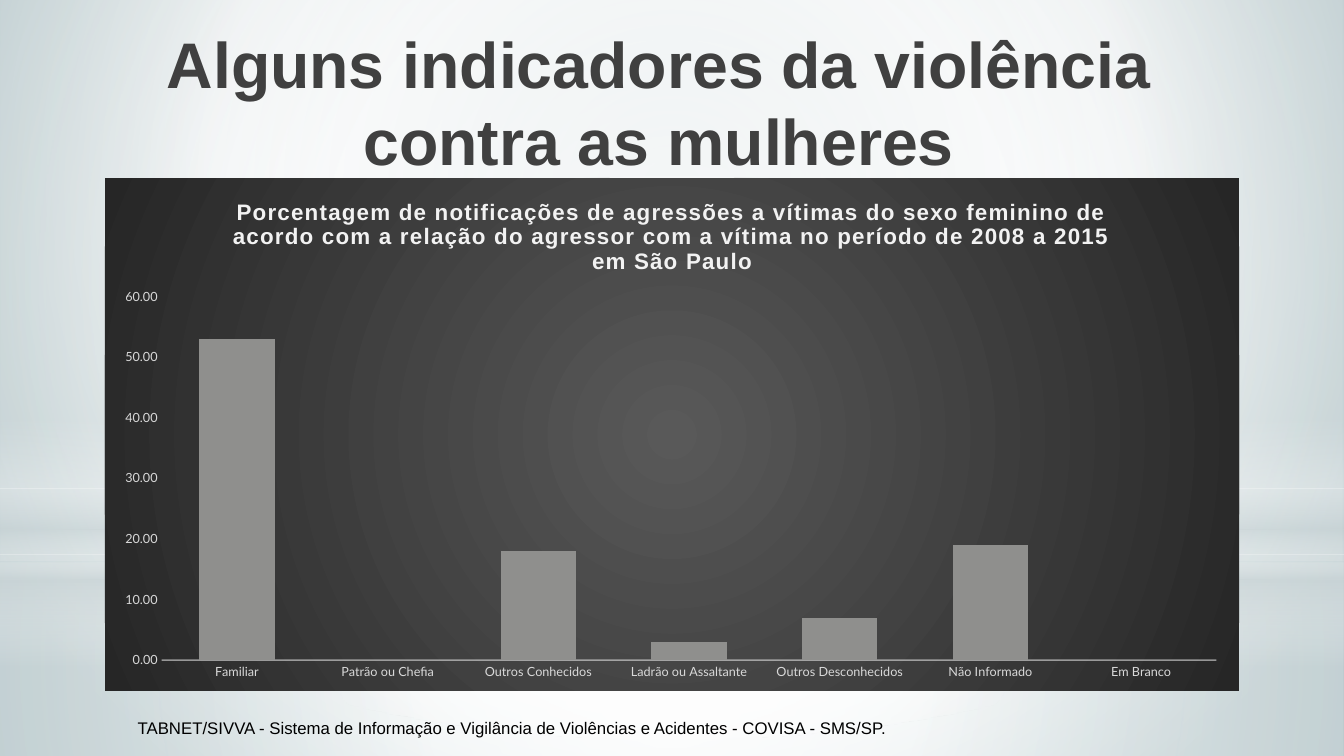
from dataclasses import dataclass
from itertools import pairwise

from lxml import etree
from pptx import Presentation, util as u
from pptx.chart.data import CategoryChartData
from pptx.dml.color import RGBColor
from pptx.enum import chart as charts, shapes, text
from pptx.oxml import parse_xml
from pptx.oxml.ns import nsdecls, qn

WIDTH, HEIGHT = u.Inches(13.33), u.Inches(7.5)

WHITE = RGBColor(0xFF, 0xFF, 0xFF)
BLACK = RGBColor(0x00, 0x00, 0x00)
MIST = RGBColor(0xCD, 0xD7, 0xD9)
PALE_TEAL = RGBColor(0xC2, 0xD0, 0xD3)
TEAL = RGBColor(0x9A, 0xB5, 0xBA)
GRAPHITE = RGBColor(0x59, 0x59, 0x59)
CHARCOAL = RGBColor(0x26, 0x26, 0x26)
TITLE_GREY = RGBColor(0x40, 0x40, 0x40)
LABEL_GREY = RGBColor(0xD9, 0xD9, 0xD9)
AXIS_GREY = RGBColor(0xF2, 0xF2, 0xF2)
BAR_GREY = RGBColor(0x8F, 0x8F, 0x8D)

CENTRE = (50, 50, 50, 50)


@dataclass(frozen=True)
class Stop:
    """Position and opacity are percentages."""
    position: int
    color: RGBColor
    opacity: int = 100


@dataclass(frozen=True)
class Gradient:
    """Radial around the focus (left, top, right, bottom); vertical without one."""
    stops: tuple[Stop, ...]
    focus: tuple[int, int, int, int] | None = CENTRE


@dataclass(frozen=True)
class Light:
    """A backdrop band across the slide; top and height are shares of its height."""
    top: float
    height: float
    gradient: Gradient
    kind: shapes.MSO_SHAPE = shapes.MSO_SHAPE.RECTANGLE


def horizon_slices(top: float, height: float, stops: tuple[Stop, ...]) -> tuple[Light, ...]:
    """One vertical two-colour band between each pair of stops."""
    return tuple(
        Light(top + height * upper.position / 100,
              height * (lower.position - upper.position) / 100,
              Gradient((Stop(0, upper.color, upper.opacity),
                        Stop(100, lower.color, lower.opacity)), None))
        for upper, lower in pairwise(stops))


BACKDROP = Gradient((Stop(0, PALE_TEAL), Stop(60, WHITE), Stop(100, TEAL)), (20, 10, 20, 60))
CHART_PANEL = Gradient((Stop(0, GRAPHITE), Stop(100, CHARCOAL)))
HORIZON = 0.744
HAZE = (Stop(0, WHITE, 0), Stop(29, WHITE, 30), Stop(45, MIST, 40),
        Stop(55, WHITE, 26), Stop(65, MIST, 60), Stop(100, WHITE, 0))
LIGHTS = (
    Light(HORIZON, 1 - HORIZON,
          Gradient((Stop(0, WHITE, 91), Stop(37, WHITE, 76), Stop(100, MIST, 79)))),
    Light(0, HORIZON,
          Gradient((Stop(0, WHITE, 89), Stop(48, WHITE, 62), Stop(100, MIST, 79)))),
    *horizon_slices(0.55, 0.333, HAZE),
    Light(0.233, HORIZON, Gradient((Stop(0, WHITE), Stop(56, WHITE, 0))),
          shapes.MSO_SHAPE.OVAL),
)

CHART_TITLE = ("Porcentagem de notificações de agressões a vítimas do sexo feminino de "
               "acordo com a relação do agressor com a vítima no período de 2008 a 2015 "
               "em São Paulo")
AGGRESSORS = {
    "Familiar": 53,
    "Patrão ou Chefia": 0,
    "Outros Conhecidos": 18,
    "Ladrão ou Assaltante": 3,
    "Outros Desconhecidos": 7,
    "Não Informado": 19,
    "Em Branco": 0,
}


def gradient_element(gradient: Gradient) -> etree.ElementBase:
    stops = "".join(
        f'<a:gs pos="{stop.position * 1000}"><a:srgbClr val="{stop.color}">'
        f'<a:alpha val="{stop.opacity * 1000}"/></a:srgbClr></a:gs>'
        for stop in gradient.stops)
    if gradient.focus is None:
        direction = '<a:lin ang="5400000" scaled="0"/>'
    else:
        left, top, right, bottom = (share * 1000 for share in gradient.focus)
        direction = (f'<a:path path="circle"><a:fillToRect l="{left}" t="{top}" '
                     f'r="{right}" b="{bottom}"/></a:path>')
    return parse_xml(f'<a:gradFill {nsdecls("a")} rotWithShape="1">'
                     f'<a:gsLst>{stops}</a:gsLst>{direction}</a:gradFill>')


def replace_solid_fill(parent: etree.ElementBase, gradient: Gradient) -> None:
    parent.replace(parent.find(qn("a:solidFill")), gradient_element(gradient))


def draw_backdrop(slide) -> None:
    slide.background.fill.solid()
    slide.background.fill.fore_color.rgb = WHITE
    replace_solid_fill(slide.element.find(f'.//{qn("p:bgPr")}'), BACKDROP)
    for light in LIGHTS:
        shape = slide.shapes.add_shape(light.kind, 0, int(HEIGHT * light.top),
                                       WIDTH, int(HEIGHT * light.height))
        shape.shadow.inherit = False
        shape.line.fill.background()
        shape.fill.solid()
        replace_solid_fill(shape.element.spPr, light.gradient)


def style_font(font, name: str, size: float, color: RGBColor, bold: bool = False) -> None:
    font.name, font.size, font.bold = name, u.Pt(size), bold
    font.color.rgb = color


def add_text(slide, box: tuple[float, float, float, float], words: str):
    """Adds a text box, given in shares of the slide, and returns its paragraph."""
    left, top, width, height = box
    frame = slide.shapes.add_textbox(int(WIDTH * left), int(HEIGHT * top),
                                     int(WIDTH * width), int(HEIGHT * height)).text_frame
    frame.word_wrap = True
    frame.vertical_anchor = text.MSO_ANCHOR.TOP
    frame.text = words
    return frame.paragraphs[0]


def place_plot(chart, x: float, y: float, width: float, height: float) -> None:
    """Fixes the inner plot area, in shares of the chart."""
    plot_area = chart.element.find(f'.//{qn("c:plotArea")}')
    for layout in plot_area.findall(qn("c:layout")):
        plot_area.remove(layout)
    plot_area.insert(0, parse_xml(
        f'<c:layout {nsdecls("c")}><c:manualLayout><c:layoutTarget val="inner"/>'
        f'<c:xMode val="edge"/><c:yMode val="edge"/><c:x val="{x}"/><c:y val="{y}"/>'
        f'<c:w val="{width}"/><c:h val="{height}"/></c:manualLayout></c:layout>'))


def draw_chart(slide) -> None:
    data = CategoryChartData(number_format="0.00")
    data.categories = AGGRESSORS.keys()
    data.add_series("Series 1", AGGRESSORS.values())
    chart = slide.shapes.add_chart(
        charts.XL_CHART_TYPE.COLUMN_CLUSTERED, int(WIDTH * 0.078), int(HEIGHT * 0.236),
        int(WIDTH * 0.844), int(HEIGHT * 0.678), data).chart
    style_font(chart.font, "Lato", 10, BLACK)
    chart.has_legend = False

    chart.has_title = True
    chart.chart_title.include_in_layout = False
    chart.chart_title.text_frame.text = CHART_TITLE
    heading = chart.chart_title.text_frame.paragraphs[0]
    style_font(heading.font, "Arial", 16, AXIS_GREY, bold=True)
    heading.font._element.set("spc", "100")

    plot = chart.plots[0]
    plot.gap_width, plot.overlap, plot.vary_by_categories = 100, -24, False
    bars = plot.series[0].format.fill
    bars.solid()
    bars.fore_color.rgb = BAR_GREY

    for axis in (chart.category_axis, chart.value_axis):
        axis.has_major_gridlines = False
        axis.major_tick_mark = axis.minor_tick_mark = charts.XL_TICK_MARK.NONE
        style_font(axis.tick_labels.font, "Lato", 9, LABEL_GREY)
    base_line = chart.category_axis.format.line
    base_line.width = u.Pt(1)
    base_line.color.rgb = AXIS_GREY
    base_color = chart.category_axis._element.find(f'.//{qn("a:ln")}//{qn("a:srgbClr")}')
    etree.SubElement(base_color, qn("a:alpha")).set("val", "54000")

    values = chart.value_axis
    values.minimum_scale, values.maximum_scale, values.major_unit = 0, 60, 10
    values.tick_labels.number_format = "0.00"
    values.tick_labels.number_format_is_linked = False
    values.format.line.fill.background()

    place_plot(chart, 0.05, 0.23, 0.93, 0.71)
    panel = parse_xml(f'<c:spPr {nsdecls("c", "a")}><a:ln><a:noFill/></a:ln></c:spPr>')
    panel.insert(0, gradient_element(CHART_PANEL))
    chart.element.find(qn("c:chart")).addnext(panel)


def main() -> None:
    presentation = Presentation()
    presentation.slide_width, presentation.slide_height = WIDTH, HEIGHT
    slide = presentation.slides.add_slide(presentation.slide_layouts[6])
    draw_backdrop(slide)
    draw_chart(slide)

    source = add_text(slide, (0.095, 0.943, 0.88, 0.05),
                      "TABNET/SIVVA - Sistema de Informação e Vigilância de Violências "
                      "e Acidentes - COVISA - SMS/SP.")
    style_font(source.font, "Arial", 12, BLACK)

    title = add_text(slide, (0.078, 0.025, 0.824, 0.2),
                     "Alguns indicadores da violência contra as mulheres")
    title.alignment = text.PP_ALIGN.CENTER
    style_font(title.font, "Arial", 46, TITLE_GREY, bold=True)
    presentation.save("out.pptx")


if __name__ == "__main__":
    main()
